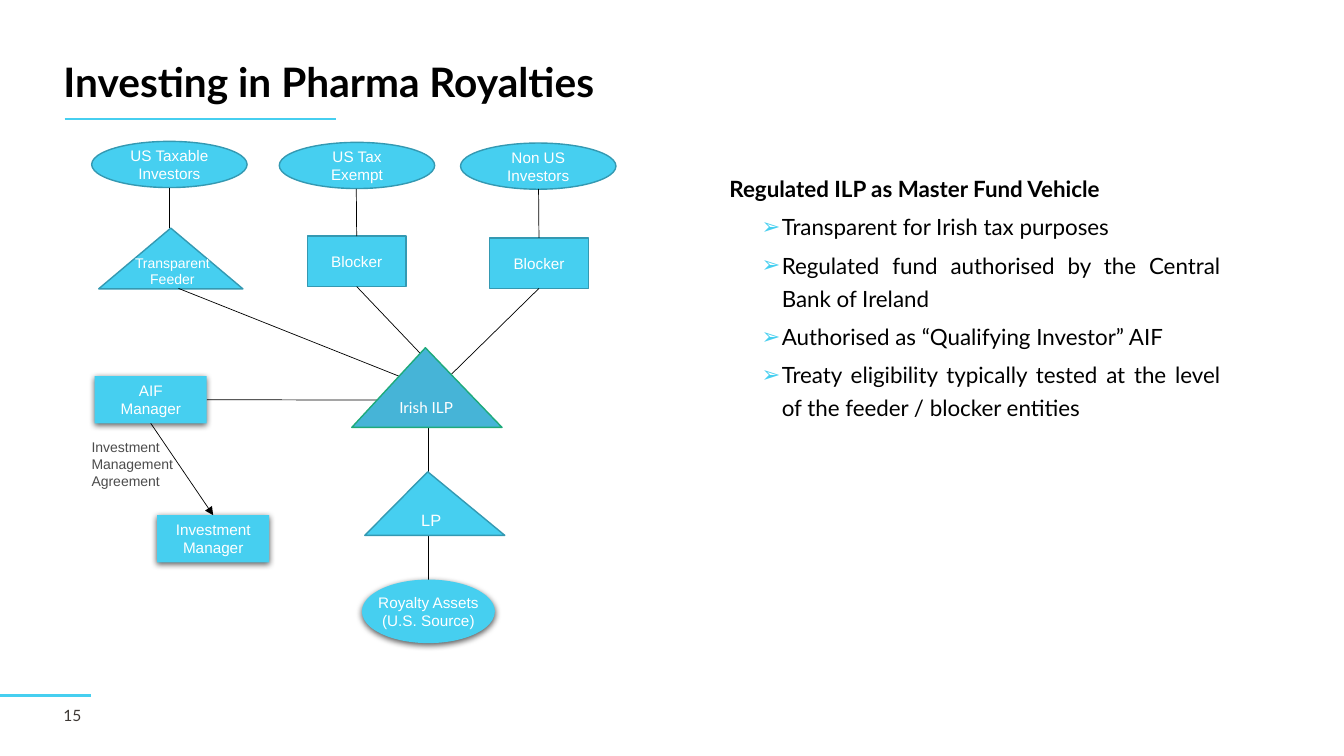
from lxml import etree
from pptx import Presentation
from pptx.dml.color import RGBColor
from pptx.enum.shapes import MSO_CONNECTOR, MSO_SHAPE
from pptx.enum.text import MSO_ANCHOR, PP_ALIGN
from pptx.oxml import parse_xml
from pptx.oxml.ns import nsdecls, qn
from pptx.util import Pt

LINE = MSO_CONNECTOR.STRAIGHT
RECT, OVAL, TRI = MSO_SHAPE.RECTANGLE, MSO_SHAPE.OVAL, MSO_SHAPE.ISOSCELES_TRIANGLE
TOP, MID = MSO_ANCHOR.TOP, MSO_ANCHOR.MIDDLE
LEFT, CENTER, FULL = PP_ALIGN.LEFT, PP_ALIGN.CENTER, PP_ALIGN.JUSTIFY
CYAN, EDGE, BLACK, WHITE = "46CFF0", "3499B2", "000000", "FFFFFF"
UP, DOWN, RIGHT = 0, 2, 3  # sides of a rectangle


def color(code):
    return RGBColor.from_string(code)


def write(shape, lines, size, font="Arial", ink=WHITE, bold=False,
          align=CENTER, anchor=MID, wrap=True):
    """Fill a shape with one paragraph per line and return the paragraphs."""
    frame = shape.text_frame
    frame.word_wrap, frame.vertical_anchor = wrap, anchor
    for i, line in enumerate(lines):
        para = frame.add_paragraph() if i else frame.paragraphs[0]
        para.text, para.alignment = line, align
        para.font.name, para.font.size, para.font.bold = font, Pt(size), bold
        para.font.color.rgb = color(ink)
    return frame.paragraphs


def label(slide, box, lines, size, **style):
    return write(slide.shapes.add_textbox(*map(Pt, box)), lines, size, **style)


def node(slide, kind, box, fill=CYAN, edge=EDGE):
    """Add a diagram shape; without an edge it casts a soft shadow."""
    shape = slide.shapes.add_shape(kind, *map(Pt, box))
    shape.shadow.inherit = False
    shape.fill.solid()
    shape.fill.fore_color.rgb = color(fill)
    if edge:
        shape.line.color.rgb = color(edge)
        shape.line.width = Pt(1)
    else:
        shape.line.fill.background()
        effects = shape._element.spPr.find(qn("a:effectLst"))
        effects.append(parse_xml(
            f'<a:outerShdw {nsdecls("a")} blurRad="{Pt(4.5)}" dist="{Pt(1.5)}" '
            'dir="5400000" rotWithShape="0"><a:srgbClr val="000000">'
            '<a:alpha val="63000"/></a:srgbClr></a:outerShdw>'))
    return shape


def link(slide, start, end, ink=BLACK, width=0.5, arrow=False):
    """Join two ends, each a point (x, y) or a pair (rectangle, side)."""
    points = [p if isinstance(p[0], (int, float)) else (0, 0) for p in (start, end)]
    line = slide.shapes.add_connector(LINE, *[Pt(v) for p in points for v in p])
    for spot, join in ((start, line.begin_connect), (end, line.end_connect)):
        if not isinstance(spot[0], (int, float)):
            join(*spot)
    line.line.color.rgb = color(ink)
    line.line.width = Pt(width)
    if arrow:
        etree.SubElement(line.line._get_or_add_ln(), qn("a:tailEnd"), type="triangle")
    etree.SubElement(line._element.spPr, qn("a:effectLst"))


def head(slide, x, y, w, h):
    para, = label(slide, (x, y, w, h), ["Investing in Pharma Royalties"], 29,
                  font="Lato", ink=BLACK, bold=True, align=LEFT)
    para.line_spacing = 0.9
    link(slide, (x + 7.9, y + 56.2), (x + 201.6, y + 56.2), CYAN, 1.5)


def foot(slide, x, y, w, h):
    link(slide, (0, y - 1.8), (65, y - 1.8), CYAN, 1.5)
    label(slide, (x, y + 4, w, h), ["15"], 11.1, font="Lato", ink="3E3935", align=LEFT)


def feeders(slide, x, y):
    """Place the investors and what they invest through; return the two blockers."""
    names = "US Taxable Investors", "US Tax Exempt", "Non US Investors"
    for name, dx, dy in zip(names, (0, 134, 263.5), (0, 0.7, 1.2)):
        oval = node(slide, OVAL, (x + dx, y + dy, 111, 33))
        write(oval, [name], 10.9)
    node(slide, TRI, (x + 5, y + 61.9, 103, 43.4))
    label(slide, (x + 15.1, y + 77, 85, 31.7), ["Transparent Feeder"], 10, anchor=TOP)
    link(slide, (x + 55.5, y + 33), (x + 55.5, y + 62))
    blocks = []
    for dx, dy in ((154, 67.7), (284.2, 69)):
        block = node(slide, RECT, (x + dx, y + dy, 70.6, 36))
        write(block, ["Blocker"], 10.9)
        link(slide, (x + dx + 35, y + 34), (block, UP))
        blocks.append(block)
    return blocks


def managers(slide, x, y):
    """Place both managers and their agreement; return the AIF manager."""
    boxes = []
    for name, dx, dy in (("AIF", 0, 0), ("Investment", 44.6, 99.4)):
        box = node(slide, RECT, (x + dx, y + dy, 80, 33.8), edge=None)
        write(box, [name + "\vManager"], 10.9, anchor=TOP)
        boxes.append(box)
    aif, adviser = boxes
    link(slide, (aif, DOWN), (adviser, UP), arrow=True)
    label(slide, (x - 9.4, y + 41, 85.7, 43), ["Investment Management Agreement"],
          10, ink="4C4C4C", align=LEFT, anchor=TOP)
    return aif


def fund(slide, x, y):
    """Stack the master fund, the partnership and the assets."""
    link(slide, (x + 54.5, y + 50), (x + 54.5, y + 185))
    ilp = node(slide, TRI, (x, y, 107.3, 56.9), "46B4D7", "1EAA7A")
    ilp.adjustments[0] = 0.49
    write(ilp, ["Irish ILP"], 10.9, font="Lato", wrap=False)
    lp = node(slide, TRI, (x + 9.3, y + 88.6, 100, 45.4))
    lp.adjustments[0] = 0.45
    write(lp, ["LP"], 11.7)
    assets = node(slide, OVAL, (x + 7.2, y + 165.6, 95, 45.4), edge=None)
    write(assets, ["Royalty Assets", "(U.S. Source)"], 10.9, wrap=False)


def chart(slide, x, y):
    """Draw the fund structure."""
    left, right = feeders(slide, x, y)
    aif = managers(slide, x + 2.2, y + 167.6)
    link(slide, (x + 62, y + 105), (x + 221, y + 168.3))
    link(slide, (left, DOWN), (x + 239.8, y + 156.8))
    link(slide, (right, DOWN), (x + 252, y + 171.2))
    link(slide, (aif, RIGHT), (x + 206, y + 184.8))
    fund(slide, x + 185.8, y + 147.4)


def points(slide, x, y, w, h):
    lines = ["Regulated ILP as Master Fund Vehicle",
             "Transparent for Irish tax purposes",
             "Regulated fund authorised by the Central Bank of Ireland",
             "Authorised as “Qualifying Investor” AIF",
             "Treaty eligibility typically tested at the level of the feeder / blocker entities"]
    paras = label(slide, (x, y, w, h), lines, 16, font="Lato", ink=BLACK,
                  align=FULL, anchor=TOP)
    for para in paras:
        para.line_spacing, para.space_before = 1.22, Pt(4)
    paras[0].font.bold = True
    for para in paras[1:]:
        props = para._p.get_or_add_pPr()
        props.set("marL", str(Pt(37.4)))
        props.set("indent", str(Pt(-14.4)))
        marks = (f'<a:buClr {nsdecls("a")}><a:srgbClr val="{CYAN}"/></a:buClr>',
                 f'<a:buFont {nsdecls("a")} typeface="Arial"/>',
                 f'<a:buChar {nsdecls("a")} char="➢"/>')
        for mark in marks:
            props.insert(list(props).index(props.find(qn("a:defRPr"))), parse_xml(mark))


def main():
    deck = Presentation()
    deck.slide_width, deck.slide_height = Pt(960), Pt(540)
    slide = deck.slides.add_slide(deck.slide_layouts[6])
    head(slide, 38.2, 28.8, 881, 63.4)
    chart(slide, 65.5, 101)
    points(slide, 514, 117.4, 365, 187)
    foot(slide, 38.2, 498.6, 41, 17.3)
    deck.save("out.pptx")


if __name__ == "__main__":
    main()
